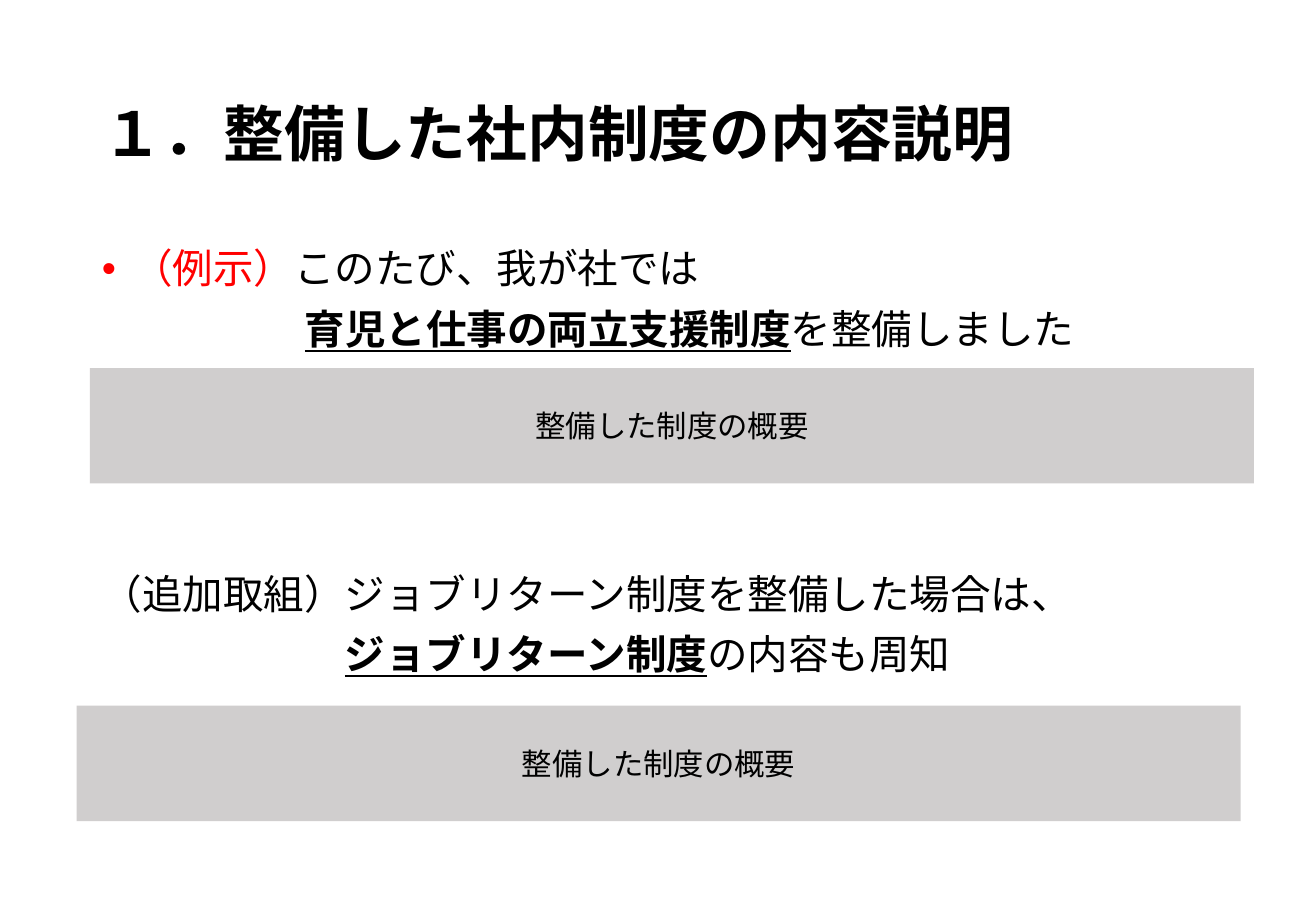
from dataclasses import dataclass

from lxml.etree import SubElement
from pptx import Presentation
from pptx.dml.color import RGBColor
from pptx.enum.lang import MSO_LANGUAGE_ID as Lang
from pptx.enum.shapes import MSO_SHAPE as Shape
from pptx.enum.text import MSO_ANCHOR as Anchor, MSO_AUTO_SIZE as Fit, PP_ALIGN as Align
from pptx.oxml.ns import qn
from pptx.util import Pt

EMU_PER_PX = 9144


@dataclass(frozen=True)
class Theme:
    """Colours, font and type sizes of the slide."""
    font: str = "Calibri"
    ink: str = "000000"
    accent: str = "FF0000"
    panel: str = "D0CECE"
    title: int = 36
    body: int = 24
    label: int = 18
    leading: float = 0.9
    gap: int = 10
    section_gap: int = 131


THEME = Theme()


def px(count):
    """Turn whole pixels into EMU."""
    return count * EMU_PER_PX


def add_span(para, text, size=THEME.body, color=THEME.ink, bold=False, underline=False):
    """Add a formatted run to a paragraph."""
    span = para.add_run()
    span.text = text
    font = span.font
    font.name, font.size = THEME.font, Pt(size)
    font.bold, font.underline = bold, underline
    font.color.rgb = RGBColor.from_string(color)
    font.language_id = Lang.JAPANESE


def format_para(para, indent=0, before=THEME.gap, bullet=None):
    """Set spacing, indent and an optional hanging bullet."""
    para.line_spacing = THEME.leading
    para.space_before = Pt(before)
    props = para._p.get_or_add_pPr()
    props.set("marL", str(px(indent)))
    props.set("indent", str(px(-indent if bullet else 0)))
    if bullet:
        SubElement(props, qn("a:buFont")).set("typeface", "Arial")
        SubElement(props, qn("a:buChar")).set("char", bullet)


def set_title(page, text):
    """Place and fill the title placeholder."""
    title = page.shapes.title
    title.left, title.top, title.width, title.height = map(px, (74, 40, 934, 145))
    frame = title.text_frame
    frame.word_wrap, frame.auto_size = True, Fit.NONE
    frame.vertical_anchor = Anchor.MIDDLE
    para = frame.paragraphs[0]
    para.alignment = Align.LEFT
    format_para(para, before=0)
    add_span(para, text, size=THEME.title, bold=True)


def add_body(page, lines):
    """Add the body text from pairs of paragraph format and spans."""
    frame = page.shapes.add_textbox(*map(px, (74, 200, 934, 476))).text_frame
    frame.word_wrap = True
    for index, (layout, spans) in enumerate(lines):
        para = frame.add_paragraph() if index else frame.paragraphs[0]
        format_para(para, **layout)
        for text, style in spans:
            add_span(para, text, **style)


def add_panel(page, left, top, text):
    """Add a grey panel with a centred label."""
    panel = page.shapes.add_shape(Shape.RECTANGLE, *map(px, (left, top, 958, 95)))
    panel.shadow.inherit = False
    panel.fill.solid()
    panel.fill.fore_color.rgb = RGBColor.from_string(THEME.panel)
    panel.line.fill.background()
    frame = panel.text_frame
    frame.word_wrap, frame.vertical_anchor = True, Anchor.MIDDLE
    para = frame.paragraphs[0]
    para.alignment = Align.CENTER
    add_span(para, text, size=THEME.label)


def main():
    """Build and save the slide."""
    deck = Presentation()
    deck.slide_width, deck.slide_height = px(1083), px(750)
    page = deck.slides.add_slide(deck.slide_layouts[5])
    set_title(page, "１．整備した社内制度の内容説明")
    strong = dict(bold=True, underline=True)
    add_body(page, [
        (dict(indent=25, bullet="•"),
         [("（例示）", dict(color=THEME.accent)), ("このたび、我が社では", {})]),
        (dict(indent=167),
         [("育児と仕事の両立支援制度", strong), ("を整備しました", {})]),
        (dict(before=THEME.section_gap),
         [("（追加取組）ジョブリターン制度を整備した場合は、", {})]),
        (dict(indent=200),
         [("ジョブリターン制度", strong), ("の内容も周知", {})]),
    ])
    for left, top in ((74, 303), (63, 581)):
        add_panel(page, left, top, "整備した制度の概要")
    deck.save("out.pptx")


if __name__ == "__main__":
    main()
